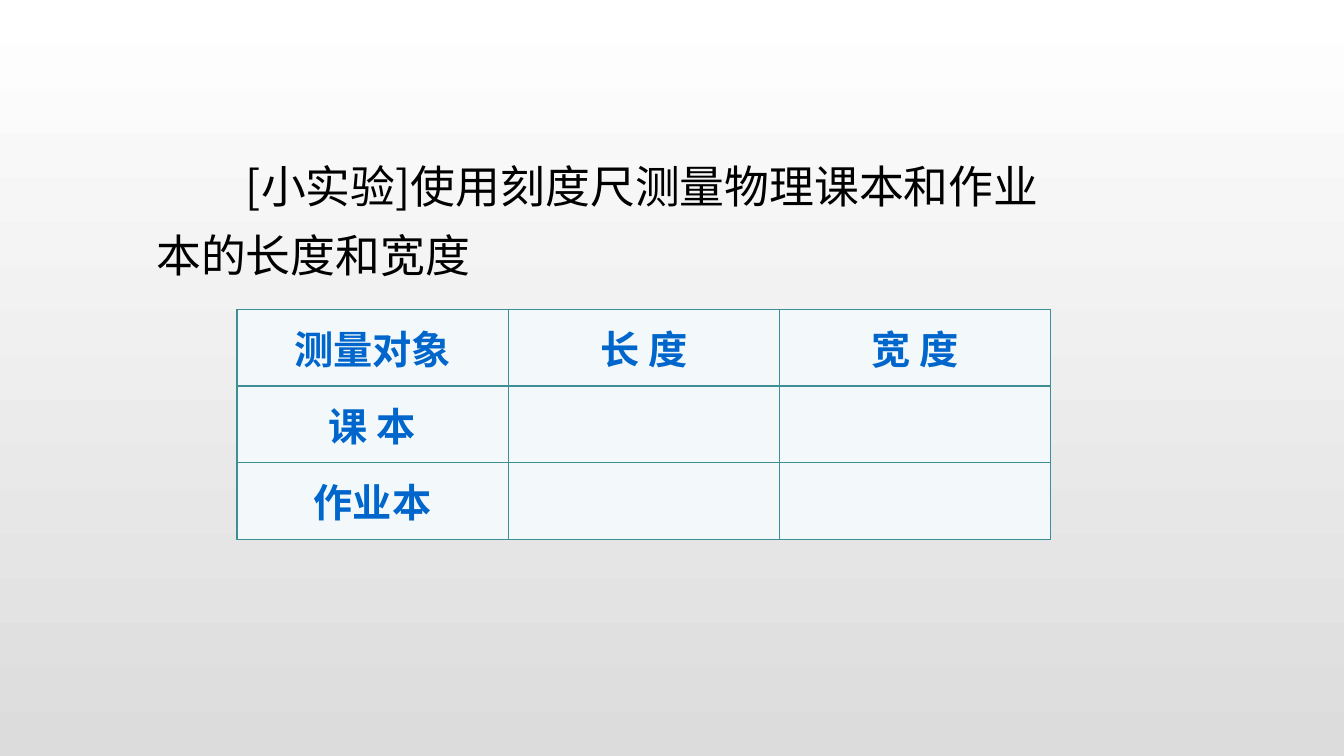
from pptx import Presentation
from pptx.dml.color import RGBColor
from pptx.enum.text import MSO_ANCHOR as ANCHOR, MSO_AUTO_SIZE as FIT, PP_ALIGN as ALIGN
from pptx.oxml import parse_xml
from pptx.oxml.ns import nsdecls
from pptx.util import Inches, Pt

FONT = "Noto Sans CJK SC"


def rgb(color):
    return RGBColor.from_string(color)


def write(tf, text, size, color, bold=False, align=ALIGN.LEFT, spacing=None, indent=0):
    """Fill a text frame with one paragraph; indent is for its first line, in points."""
    p = tf.paragraphs[0]
    p.alignment = align
    p.line_spacing = spacing
    if indent:
        pPr = p._p.get_or_add_pPr()
        pPr.set("marL", "0")
        pPr.set("indent", str(Pt(indent)))
    r = p.add_run()
    r.text = text
    r.font.size, r.font.bold, r.font.name = Pt(size), bold, FONT
    r.font.color.rgb = rgb(color)
    r._r.get_or_add_rPr().append(
        parse_xml(f'<a:ea {nsdecls("a")} typeface="{FONT}"/>'))


class LessonSlide:
    INK, ACCENT, CELL, RULE = "000000", "0066CC", "F3F9FA", "3D8F95"
    BACKGROUND = "FFFFFF", "DCDCDC"

    def __init__(self, prs):
        self.width, self.height = prs.slide_width, prs.slide_height
        self.s = prs.slides.add_slide(prs.slide_layouts.get_by_name("Title Only"))
        fill = self.s.background.fill
        fill.gradient()
        fill.gradient_angle = 270
        for stop, color in zip(fill.gradient_stops, self.BACKGROUND):
            stop.color.rgb = rgb(color)

    def place(self, left, top, width, height):
        """Turn percentages of the slide's size into lengths."""
        return [round(share * side / 100) for share, side in
                zip((left, top, width, height), (self.width, self.height) * 2)]

    def title(self, text, *box):
        sp = self.s.shapes.title
        sp.left, sp.top, sp.width, sp.height = self.place(*box)
        tf = sp.text_frame
        tf.word_wrap, tf.auto_size, tf.vertical_anchor = True, FIT.NONE, ANCHOR.TOP
        write(tf, text, 32, self.INK, spacing=1.3, indent=64)

    def border(self, cell):
        tcPr = cell._tc.get_or_add_tcPr()
        for side in "LRTB":
            tcPr.append(parse_xml(
                f'<a:ln{side} {nsdecls("a")} w="{Pt(1)}"><a:solidFill>'
                f'<a:srgbClr val="{self.RULE}"/></a:solidFill></a:ln{side}>'))

    def table(self, rows, *box):
        table = self.s.shapes.add_table(len(rows), len(rows[0]), *self.place(*box)).table
        table.first_row = table.horz_banding = False
        for i, row in enumerate(rows):
            for j, text in enumerate(row):
                cell = table.cell(i, j)
                self.border(cell)
                cell.fill.solid()
                cell.fill.fore_color.rgb = rgb(self.CELL)
                cell.vertical_anchor = ANCHOR.MIDDLE
                cell.margin_left = cell.margin_right = Inches(0.13)
                if text:
                    write(cell.text_frame, text, 28, self.ACCENT, bold=True,
                          align=ALIGN.CENTER)


def main():
    prs = Presentation()
    prs.slide_width, prs.slide_height = Inches(13.33), Inches(7.5)
    slide = LessonSlide(prs)
    slide.title("[小实验]使用刻度尺测量物理课本和作业本的长度和宽度",
                10.88, 18.13, 69.47, 18.67)
    slide.table([["测量对象", "长 度", "宽 度"],
                 ["课 本", "", ""],
                 ["作业本", "", ""]],
                17.63, 40.93, 60.54, 30.4)
    prs.save("out.pptx")


if __name__ == "__main__":
    main()
